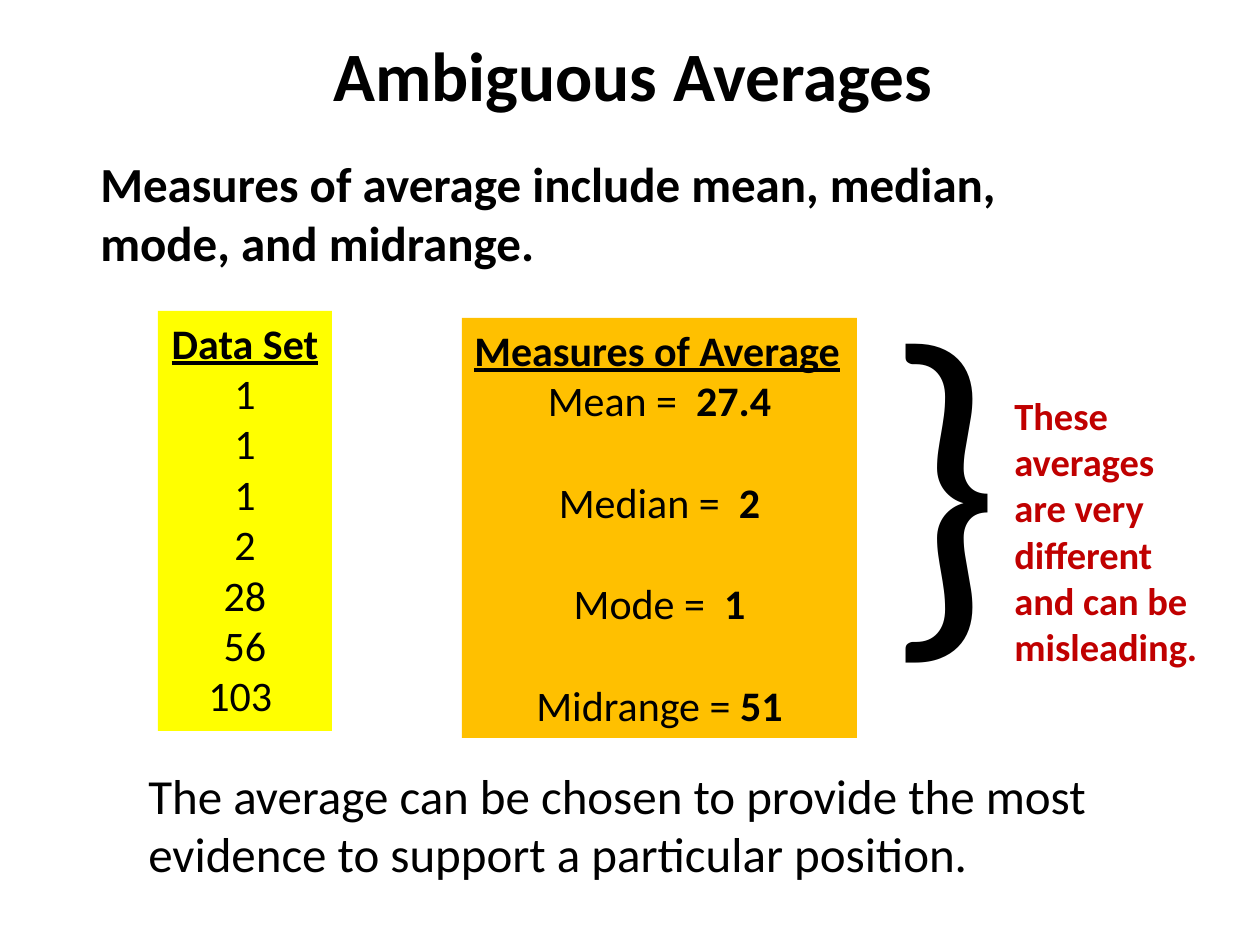
from pptx import Presentation, util as u
from pptx.dml.color import RGBColor
from pptx.enum import shapes, text

PX = u.Inches(1) // 126
BLACK = RGBColor(0, 0, 0)
RED = RGBColor(0xC0, 0, 0)
YELLOW = RGBColor(0xFF, 0xFF, 0)
ORANGE = RGBColor(0xFF, 0xC0, 0)
LEFT, CENTER = text.PP_ALIGN.LEFT, text.PP_ALIGN.CENTER

TITLE = "Ambiguous Averages"
TITLE_BOX = (66, 40, 1134, 67)
TEXTS = [
    ((88, 147, 1008, 168), ["Measures of average include mean, median, mode, and midrange."],
     28, "Calibri", BLACK, True),
    ((1002, 386, 217, 292), ["These averages are very different and can be", "misleading."],
     22, "Calibri", RED, True),
    ((136, 759, 1008, 136), ["The average can be chosen to provide the most evidence "
                             "to support a particular position."],
     28, "Calibri", BLACK, False),
    ((882, 256, 95, 437), ["}"], 200, "Lato", BLACK, False),
]
DATA = ["1", "1", "1", "2", "28", "56", "103 "]
AVERAGES = [("Mean =  ", "27.4"), ("Median =  ", "2"), ("Mode =  ", "1"), ("Midrange = ", "51")]
PANELS = [
    ((158, 311, 174, 420), YELLOW, "Data Set", CENTER, [(d, "") for d in DATA], 0),
    ((462, 318, 395, 420), ORANGE, "Measures of Average", LEFT, AVERAGES, 29.3),
]


def emu(box):
    return [v * PX for v in box]


def style(p, size, name="Calibri", color=BLACK, bold=False, align=LEFT):
    p.alignment = align
    f = p.font
    f.size, f.name, f.bold = u.Pt(size), name, bold
    f.color.rgb = color


def add_text(s, box, lines, *look):
    tf = s.shapes.add_textbox(*emu(box)).text_frame
    tf.word_wrap = True
    for i, line in enumerate(lines):
        p = tf.paragraphs[0] if i == 0 else tf.add_paragraph()
        p.text = line
        style(p, *look)


def add_panel(s, box, fill, heading, align, rows, gap):
    sp = s.shapes.add_shape(shapes.MSO_SHAPE.RECTANGLE, *emu(box))
    sp.shadow.inherit = False
    sp.fill.solid()
    sp.fill.fore_color.rgb = fill
    sp.line.fill.background()
    tf = sp.text_frame
    tf.word_wrap = False
    tf.vertical_anchor = text.MSO_ANCHOR.TOP
    p = tf.paragraphs[0]
    p.text = heading
    style(p, 24, bold=True, align=align)
    p.font.underline = True
    for i, (label, value) in enumerate(rows):
        p = tf.add_paragraph()
        style(p, 24, align=CENTER)
        p.space_before = u.Pt(gap if i else 0)
        p.add_run().text = label
        if value:
            r = p.add_run()
            r.text = value
            r.font.bold = True


def main():
    prs = Presentation()
    prs.slide_width, prs.slide_height = u.Inches(10), u.Inches(7.5)
    s = prs.slides.add_slide(prs.slide_layouts[5])
    title = s.shapes.title
    title.left, title.top, title.width, title.height = emu(TITLE_BOX)
    tf = title.text_frame
    tf.text = TITLE
    tf.auto_size = text.MSO_AUTO_SIZE.NONE
    tf.vertical_anchor = text.MSO_ANCHOR.MIDDLE
    style(tf.paragraphs[0], 39.6, bold=True, align=CENTER)
    for panel in PANELS:
        add_panel(s, *panel)
    for item in TEXTS:
        add_text(s, *item)
    prs.save("out.pptx")


if __name__ == "__main__":
    main()
